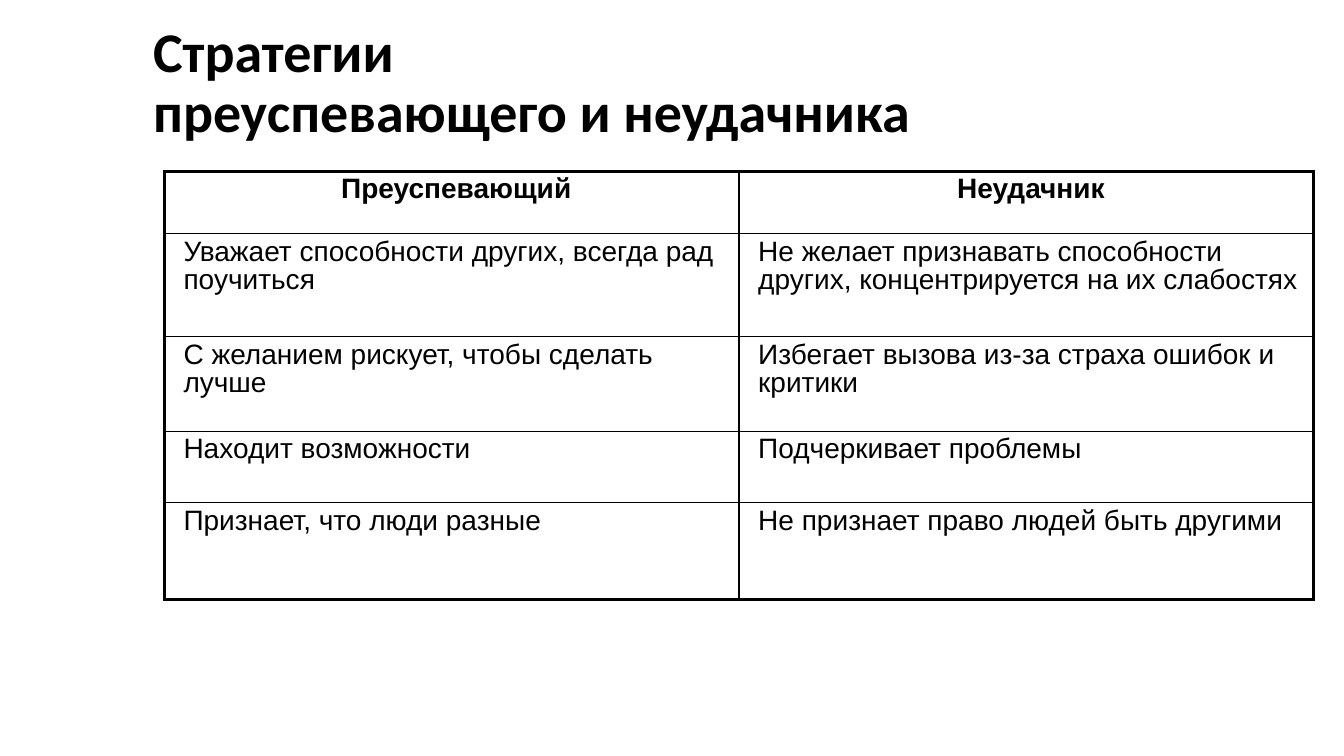
from lxml.etree import SubElement
from pptx import Presentation
from pptx.dml.color import RGBColor
from pptx.enum.text import MSO_ANCHOR, PP_ALIGN
from pptx.oxml.ns import qn
from pptx.util import Inches, Pt

BLACK = RGBColor(0x00, 0x00, 0x00)
THIN, THICK = Pt(1), Pt(2.25)

TITLE = "Стратегии \vпреуспевающего и неудачника"
STRATEGIES = [
    ("Преуспевающий", "Неудачник"),
    ("Уважает способности других, всегда рад поучиться",
     "Не желает признавать способности других, концентрируется на их слабостях"),
    ("С желанием рискует, чтобы сделать лучше",
     "Избегает вызова из-за страха ошибок и критики"),
    ("Находит возможности", "Подчеркивает проблемы"),
    ("Признает, что люди разные", "Не признает право людей быть другими"),
]
COLUMN_WIDTH = 5.7
ROW_HEIGHTS = [0.62, 1.02, 0.94, 0.71, 0.96]


def style_paragraph(para, font_name, size, bold):
    para.line_spacing = 0.9
    para.font.name = font_name
    para.font.size = Pt(size)
    para.font.bold = bold
    para.font.color.rgb = BLACK


def add_title(page, text):
    box = page.shapes.add_textbox(Inches(1.42), Inches(0.21), Inches(11.71), Inches(1.25))
    box.text_frame.word_wrap = True
    box.text_frame.vertical_anchor = MSO_ANCHOR.MIDDLE
    para = box.text_frame.paragraphs[0]
    para.text = text
    style_paragraph(para, "Calibri", 40, True)


def set_borders(cell, widths):
    """Draw the left, right, top and bottom edges, in that order."""
    properties = cell._tc.get_or_add_tcPr()
    for side, width in zip(("a:lnL", "a:lnR", "a:lnT", "a:lnB"), widths):
        line = SubElement(properties, qn(side), w=str(int(width)))
        fill = SubElement(line, qn("a:solidFill"))
        SubElement(fill, qn("a:srgbClr"), val=str(BLACK))


def fill_cell(cell, text, is_header):
    para = cell.text_frame.paragraphs[0]
    para.text = text
    style_paragraph(para, "Arial", 20, is_header)
    para.alignment = PP_ALIGN.CENTER if is_header else PP_ALIGN.LEFT
    para.space_before = Pt(10)
    indent = para._p.get_or_add_pPr()
    indent.set("marL", str(Inches(0.09)))
    indent.set("indent", "0")


def add_strategy_table(page, rows):
    row_count, column_count = len(rows), len(rows[0])
    frame = page.shapes.add_table(
        row_count, column_count, Inches(1.63), Inches(1.7),
        Inches(COLUMN_WIDTH * column_count), Inches(sum(ROW_HEIGHTS)))
    table = frame.table
    table.first_row = table.horz_banding = False
    for column in table.columns:
        column.width = Inches(COLUMN_WIDTH)
    for r, texts in enumerate(rows):
        table.rows[r].height = Inches(ROW_HEIGHTS[r])
        for c, text in enumerate(texts):
            cell = table.cell(r, c)
            fill_cell(cell, text, r == 0)
            # Thick outer frame, thin inner rules
            outer = (c == 0, c == column_count - 1, r == 0, r == row_count - 1)
            set_borders(cell, [THICK if edge else THIN for edge in outer])
            cell.fill.background()


def main():
    deck = Presentation()
    deck.slide_width, deck.slide_height = Inches(13.33), Inches(7.5)
    page = deck.slides.add_slide(deck.slide_layouts[6])
    add_title(page, TITLE)
    add_strategy_table(page, STRATEGIES)
    deck.save("out.pptx")


if __name__ == "__main__":
    main()
